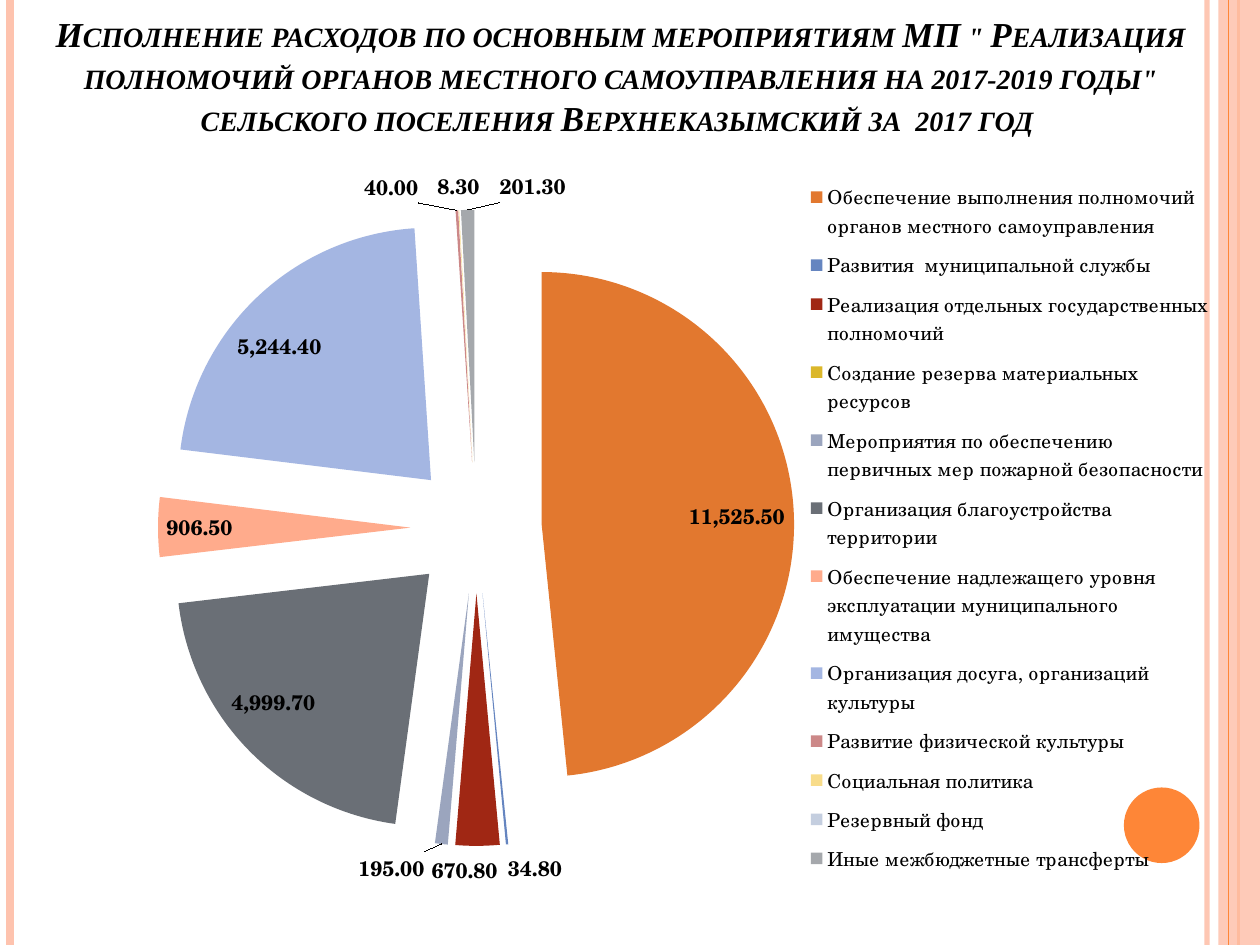
from dataclasses import dataclass

from lxml import etree
from pptx import Presentation
from pptx.chart.data import CategoryChartData
from pptx.dml.color import RGBColor
from pptx.enum import chart as ch, shapes, text
from pptx.oxml import parse_xml
from pptx.oxml.ns import nsdecls, qn
from pptx.util import Inches, Pt


@dataclass(frozen=True)
class Theme:
    accent: str = "FE8637"
    pale: str = "FEC3AE"
    ink: str = "000000"
    title_font: str = "Times New Roman"
    chart_font: str = "TeX Gyre Schola"
    title_size: int = 20
    label_size: int = 12
    legend_size: int = 11


THEME = Theme()
TITLE = ('Исполнение расходов по основным мероприятиям МП " Реализация полномочий '
         'органов местного самоуправления на 2017-2019 годы" сельского поселения '
         'Верхнеказымский за  2017 год ')

# Category, amount, slice colour
EXPENSES = [
    ("Обеспечение выполнения полномочий органов местного самоуправления ", 11525.5, "E2782F"),
    ("Развития  муниципальной службы ", 34.8, "6585C0"),
    ("Реализация отдельных государственных полномочий ", 670.8, "A02714"),
    ("Создание резерва материальных ресурсов ", 0, "DBB72A"),
    ("Мероприятия по обеспечению первичных мер пожарной безопасности ", 195, "9BA5BE"),
    ("Организация благоустройства территории", 4999.7, "6A6F76"),
    ("Обеспечение надлежащего уровня эксплуатации муниципального имущества ", 906.5, "FFAB8C"),
    ("Организация досуга, организаций культуры", 5244.4, "A4B6E2"),
    ("Развитие физической культуры", 40, "CC8888"),
    ("Социальная политика ", 8.3, "F8DC8A"),
    ("Резервный фонд", 0, "C4CEDF"),
    ("Иные межбюджетные трансферты ", 201.3, "A5A8AC"),
]


def rgb(value):
    return RGBColor.from_string(value)


def set_alpha(shape, percent):
    for color in shape._element.spPr.iter(qn("a:srgbClr")):
        etree.SubElement(color, qn("a:alpha")).set("val", str(percent * 1000))


def add_rule(page, x, color, width):
    rule = page.shapes.add_connector(shapes.MSO_CONNECTOR.STRAIGHT,
                                     Inches(x), 0, Inches(x), Inches(7.5))
    rule.line.color.rgb = rgb(color)
    rule.line.width = Pt(width)
    etree.SubElement(rule._element.spPr, qn("a:effectLst"))
    return rule


def add_plain_shape(page, kind, box, color):
    shape = page.shapes.add_shape(kind, *map(Inches, box))
    shape.shadow.inherit = False
    shape.fill.solid()
    shape.fill.fore_color.rgb = rgb(color)
    shape.line.fill.background()
    return shape


def add_decor(page):
    set_alpha(add_rule(page, 9.58, THEME.pale, 3), 93)
    add_rule(page, 0.08, THEME.pale, 4.5)
    add_rule(page, 9.83, THEME.accent, 1.5)
    band = add_plain_shape(page, shapes.MSO_SHAPE.RECTANGLE, (9.67, 0, 0.33, 7.5), THEME.pale)
    set_alpha(band, 87)
    add_rule(page, 9.75, THEME.accent, 0.75)
    add_plain_shape(page, shapes.MSO_SHAPE.OVAL, (8.92, 6.25, 0.6, 0.6), THEME.accent)


def set_title(page):
    title = page.shapes.title
    title.left, title.top, title.width, title.height = map(Inches, (0.2, 0.21, 9.45, 0.94))
    frame = title.text_frame
    frame.text = TITLE
    frame.word_wrap = True
    frame.auto_size = text.MSO_AUTO_SIZE.NONE
    frame.vertical_anchor = text.MSO_ANCHOR.BOTTOM
    para = frame.paragraphs[0]
    para.alignment = text.PP_ALIGN.CENTER
    font = para.runs[0].font
    font.name, font.size = THEME.title_font, Pt(THEME.title_size)
    font.bold = font.italic = True
    font.color.rgb = rgb(THEME.ink)
    font._element.set("cap", "small")


def style_font(font, size, bold=False):
    font.name, font.size, font.bold = THEME.chart_font, Pt(size), bold
    font.color.rgb = rgb(THEME.ink)


def layout_xml(x, y, w, h, inner=False):
    target = '<c:layoutTarget val="inner"/>' if inner else ""
    return parse_xml(
        f'<c:layout {nsdecls("c")}><c:manualLayout>{target}'
        '<c:xMode val="edge"/><c:yMode val="edge"/>'
        f'<c:x val="{x}"/><c:y val="{y}"/><c:w val="{w}"/><c:h val="{h}"/>'
        '</c:manualLayout></c:layout>')


def place(element, layout, before):
    """Swap in a manual layout ahead of the named child."""
    for old in element.findall(qn("c:layout")):
        element.remove(old)
    element.find(qn(before)).addprevious(layout)


def add_pie(page):
    data = CategoryChartData(number_format="#,##0.00")
    data.categories = [name for name, _, _ in EXPENSES]
    data.add_series("Series 1", [amount for _, amount, _ in EXPENSES])
    box = map(Inches, (0.51, 1.19, 9.21, 5.94))
    chart = page.shapes.add_chart(ch.XL_CHART_TYPE.PIE, *box, data).chart
    chart.has_title = False
    style_font(chart.font, 10)

    # Legend
    chart.has_legend = True
    legend = chart.legend
    legend.position = ch.XL_LEGEND_POSITION.RIGHT
    legend.include_in_layout = False
    style_font(legend.font, THEME.legend_size)
    place(legend._element, layout_xml(0.64, 0.03, 0.35, 0.95), "c:overlay")

    # Exploded slices
    plot = chart.plots[0]
    plot.vary_by_categories = True
    place(chart._chartSpace.chart.plotArea, layout_xml(0.08, 0.08, 0.55, 0.85, True),
          "c:pieChart")
    series = plot.series[0]
    for index, (_, _, color) in enumerate(EXPENSES):
        fill = series.points[index].format.fill
        fill.solid()
        fill.fore_color.rgb = rgb(color)
    explosion = parse_xml(f'<c:explosion {nsdecls("c")} val="26"/>')
    series._element.find(qn("c:dPt")).addprevious(explosion)

    # Value labels, none on empty slices
    labels = series.data_labels
    labels.show_value = True
    labels.show_percentage = False
    labels.number_format = "#,##0.00"
    labels.number_format_is_linked = False
    labels.position = ch.XL_LABEL_POSITION.BEST_FIT
    style_font(labels.font, THEME.label_size, bold=True)
    empty = [i for i, (_, amount, _) in enumerate(EXPENSES) if not amount]
    for order, index in enumerate(empty):
        labels._element.insert(order, parse_xml(
            f'<c:dLbl {nsdecls("c")}><c:idx val="{index}"/><c:delete val="1"/></c:dLbl>'))


def main():
    deck = Presentation()
    deck.slide_width, deck.slide_height = Inches(10), Inches(7.5)
    page = deck.slides.add_slide(deck.slide_layouts[5])
    add_decor(page)
    set_title(page)
    add_pie(page)
    deck.save("out.pptx")


if __name__ == "__main__":
    main()
